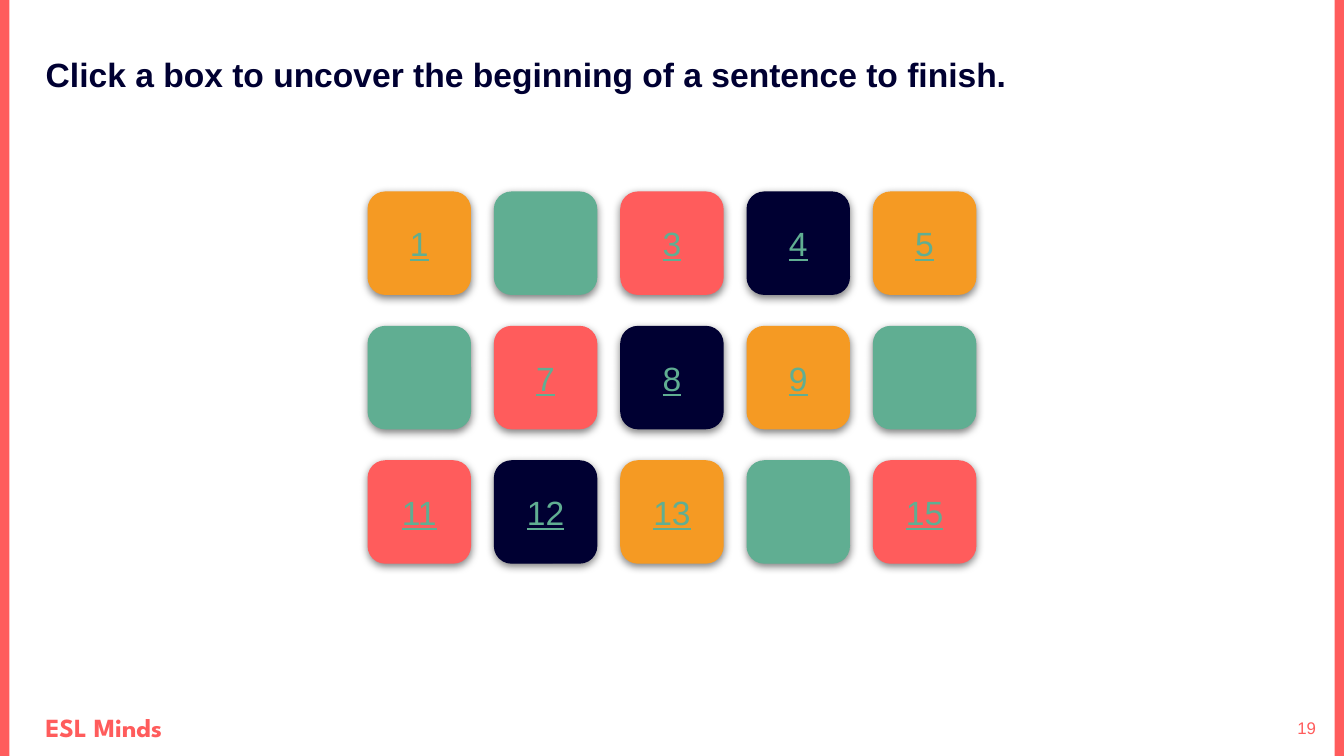
from pptx import Presentation
from pptx.dml.color import RGBColor
from pptx.enum.shapes import MSO_SHAPE
from pptx.enum.text import MSO_ANCHOR, MSO_AUTO_SIZE, PP_ALIGN
from pptx.oxml import parse_xml
from pptx.oxml.ns import nsdecls, qn
from pptx.util import Inches, Pt

RECTANGLE = MSO_SHAPE.RECTANGLE
ROUNDED_RECTANGLE = MSO_SHAPE.ROUNDED_RECTANGLE
TOP, MIDDLE = MSO_ANCHOR.TOP, MSO_ANCHOR.MIDDLE
LEFT, CENTER, RIGHT = PP_ALIGN.LEFT, PP_ALIGN.CENTER, PP_ALIGN.RIGHT
NO_AUTOFIT = MSO_AUTO_SIZE.NONE

CORAL = RGBColor(0xFF, 0x5C, 0x5C)
NAVY = RGBColor(0x00, 0x00, 0x32)
ORANGE = RGBColor(0xF5, 0x9A, 0x23)
GREEN = RGBColor(0x60, 0xAE, 0x92)

SLIDE_WIDTH = 10
SLIDE_HEIGHT = SLIDE_WIDTH * 9 / 16
BAR_WIDTH = 0.07

BOX_COLORS = [ORANGE, GREEN, CORAL, NAVY]
ROWS, COLUMNS = 3, 5
GRID_LEFT, GRID_TOP = 2.74, 1.43
COLUMN_STEP, ROW_STEP = 0.94, 1.0
BOX_SIZE = 0.76

SHADOW = (
    f'<a:outerShdw {nsdecls("a")} blurRad="{Pt(4.5)}" dist="{Pt(1.5)}" '
    'dir="5400000" algn="bl" rotWithShape="0">'
    '<a:srgbClr val="000000"><a:alpha val="50000"/></a:srgbClr></a:outerShdw>'
)


def write_text(shape, text, size, color, align=LEFT, anchor=TOP, font="Arial",
               bold=False, underline=False, wrap=True):
    frame = shape.text_frame
    frame.auto_size = NO_AUTOFIT
    frame.word_wrap = wrap
    frame.vertical_anchor = anchor
    frame.margin_left = frame.margin_right = Inches(0.1)
    frame.margin_top = frame.margin_bottom = Inches(0.1)
    paragraph = frame.paragraphs[0]
    paragraph.alignment = align
    run = paragraph.add_run()
    run.text = text
    run.font.name = font
    run.font.size = Pt(size)
    run.font.bold = bold
    run.font.underline = underline
    run.font.color.rgb = color


def place(shape, left, top, width, height):
    shape.left, shape.top = Inches(left), Inches(top)
    shape.width, shape.height = Inches(width), Inches(height)


def add_text(slide, left, top, width, height, text, size, color, **style):
    box = slide.shapes.add_textbox(
        Inches(left), Inches(top), Inches(width), Inches(height))
    write_text(box, text, size, color, **style)


def add_filled_shape(slide, kind, left, top, width, height, color):
    shape = slide.shapes.add_shape(
        kind, Inches(left), Inches(top), Inches(width), Inches(height))
    shape.fill.solid()
    shape.fill.fore_color.rgb = color
    shape.line.fill.background()
    shape.shadow.inherit = False
    return shape


def add_number_box(slide, number, left, top, color):
    """Add a rounded box; a green one carries no number."""
    box = add_filled_shape(
        slide, ROUNDED_RECTANGLE, left, top, BOX_SIZE, BOX_SIZE, color)
    box.adjustments[0] = 0.167
    box.line.color.rgb = color
    box.line.width = Pt(0.75)
    effects = box.element.spPr.find(qn("a:effectLst"))
    effects.append(parse_xml(SHADOW))
    if color != GREEN:
        write_text(box, str(number), 18, GREEN, align=CENTER, anchor=MIDDLE,
                   underline=True)


def add_box_grid(slide):
    for index in range(ROWS * COLUMNS):
        row, column = divmod(index, COLUMNS)
        add_number_box(
            slide, index + 1,
            GRID_LEFT + column * COLUMN_STEP, GRID_TOP + row * ROW_STEP,
            BOX_COLORS[index % len(BOX_COLORS)])


def main():
    presentation = Presentation()
    presentation.slide_width = Inches(SLIDE_WIDTH)
    presentation.slide_height = Inches(SLIDE_HEIGHT)
    slide = presentation.slides.add_slide(presentation.slide_layouts[5])

    for left in (0, SLIDE_WIDTH - BAR_WIDTH):
        add_filled_shape(slide, RECTANGLE, left, 0, BAR_WIDTH, SLIDE_HEIGHT, CORAL)
    add_text(slide, 0.24, 5.19, 1.12, 0.44, "ESL Minds", 14, CORAL,
             font="League Spartan", bold=True, wrap=False)

    title = slide.shapes.title
    place(title, 0.24, 0.3, 9.02, 0.5)
    write_text(title, "Click a box to uncover the beginning of a sentence to finish.",
               18, NAVY, bold=True)

    add_box_grid(slide)
    add_text(slide, 9.3, 5.2, 0.59, 0.43, "19", 9, CORAL,
             align=RIGHT, anchor=MIDDLE)
    presentation.save("out.pptx")


if __name__ == "__main__":
    main()
